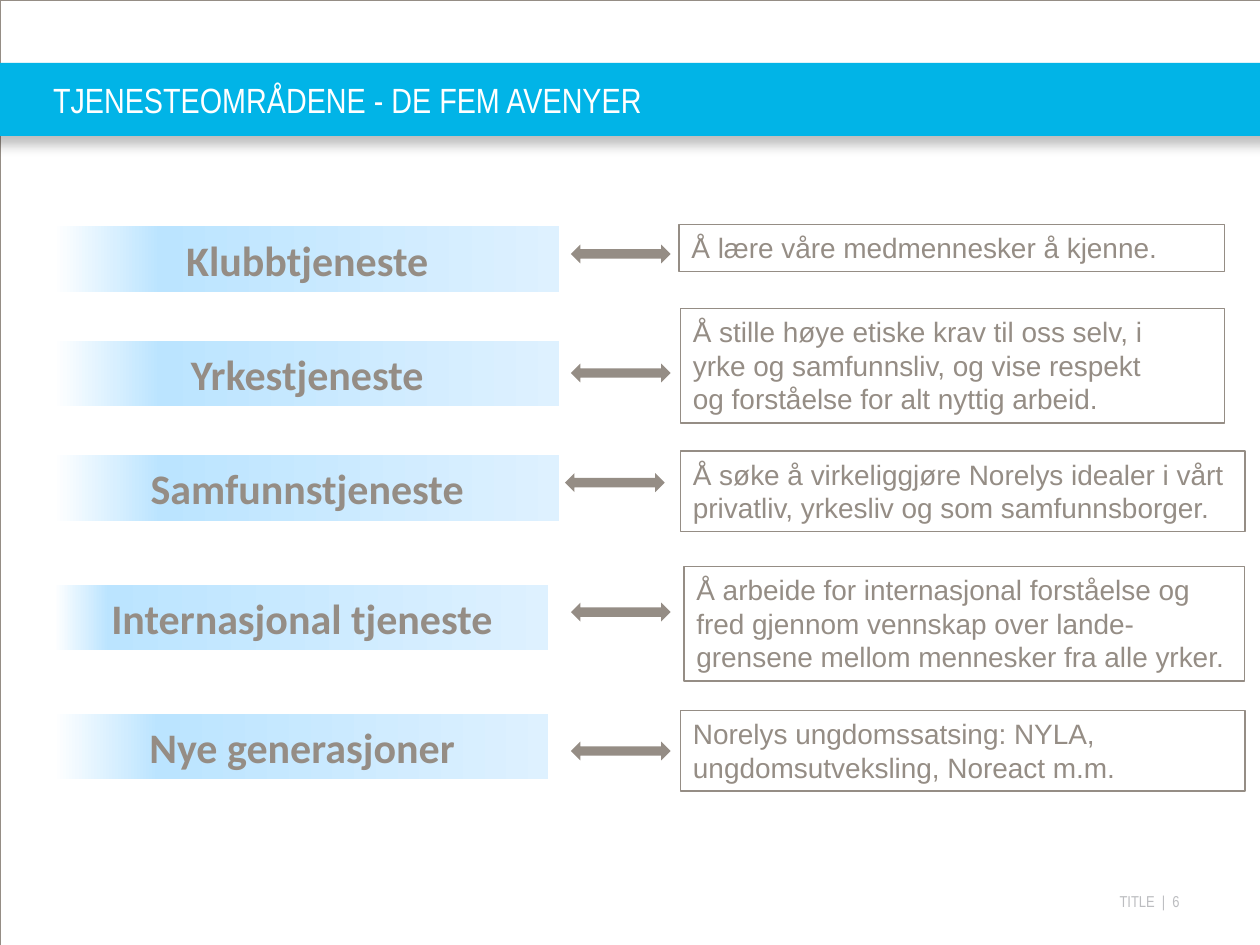
from copy import deepcopy
from typing import NamedTuple

from lxml.etree import SubElement
from pptx import Presentation
from pptx.dml.color import RGBColor
from pptx.enum.shapes import MSO_SHAPE
from pptx.enum.text import MSO_ANCHOR, PP_ALIGN
from pptx.oxml.ns import qn
from pptx.util import Cm, Pt

WHITE = RGBColor(0xFF, 0xFF, 0xFF)
BLACK = RGBColor(0x00, 0x00, 0x00)
TAUPE = RGBColor(0x95, 0x8D, 0x85)
CYAN = RGBColor(0x01, 0xB4, 0xE7)
SKY = RGBColor(0xBB, 0xE4, 0xFF)
PALE = RGBColor(0xDE, 0xF1, 0xFF)
SILVER = RGBColor(0xBC, 0xBD, 0xC0)

SLIDE_WIDTH, SLIDE_HEIGHT = 25.4, 19.05
ROW_LEFT = 1.09
LABEL_HEIGHT = 1.4
ARROW_WIDTH, ARROW_HEIGHT = 2.01, 0.38


class Avenue(NamedTuple):
    """One avenue of service, with offsets in cm from the row's corner."""

    top: float
    label: str
    label_width: float
    peak: float
    arrow_left: float
    arrow_top: float
    text: str
    text_left: float
    text_top: float
    text_width: float
    text_height: float


AVENUES = [
    Avenue(4.53, "Klubbtjeneste", 10.21, 0.21, 10.42, 0.4,
           "Å lære våre medmennesker å kjenne.", 12.6, 0, 11, 0.94),
    Avenue(6.83, "Yrkestjeneste", 10.21, 0.21, 10.42, 0.5,
           "Å stille høye etiske krav til oss selv, i\n"
           "yrke og samfunnsliv, og vise respekt\n"
           "og forståelse for alt nyttig arbeid.", 12.63, -0.61, 10.97, 2.31),
    Avenue(9.14, "Samfunnstjeneste", 10.21, 0.21, 10.3, 0.4,
           "Å søke å virkeliggjøre Norelys idealer i vårt "
           "privatliv, yrkesliv og som samfunnsborger.", 12.63, -0.05, 11.38, 1.63),
    Avenue(11.75, "Internasjonal tjeneste", 10, 0.11, 10.42, 0.4,
           "Å arbeide for internasjonal forståelse og\n"
           "fred gjennom vennskap over lande-grensene "
           "mellom mennesker fra alle yrker.", 12.7, -0.33, 11.3, 2.31),
    Avenue(14.35, "Nye generasjoner", 10, 0.21, 10.42, 0.6,
           "Norelys ungdomssatsing: NYLA, ungdomsutveksling, Noreact m.m.",
           12.63, -0.03, 11.38, 1.63),
]


def add_block(slide, left, top, width, height, preset=MSO_SHAPE.RECTANGLE,
              fill=None, line=None, line_width=0.75):
    """Add a preset shape without shadow; absent colours leave it unpainted."""
    shape = slide.shapes.add_shape(preset, Cm(left), Cm(top), Cm(width), Cm(height))
    shape.shadow.inherit = False
    if fill is None:
        shape.fill.background()
    else:
        shape.fill.solid()
        shape.fill.fore_color.rgb = fill
    if line is None:
        shape.line.fill.background()
    else:
        shape.line.color.rgb = line
        shape.line.width = Pt(line_width)
    return shape


def write_text(shape, text, font_name, size, color, bold=False,
               align=PP_ALIGN.LEFT, anchor=MSO_ANCHOR.TOP):
    """Fill a shape with one wrapped paragraph in a single style."""
    frame = shape.text_frame
    frame.word_wrap = True
    frame.vertical_anchor = anchor
    paragraph = frame.paragraphs[0]
    paragraph.text = text
    paragraph.alignment = align
    for run in paragraph.runs:
        run.font.name = font_name
        run.font.size = Pt(size)
        run.font.bold = bold
        run.font.color.rgb = color
    properties = paragraph.runs[0].font._element
    for line_break in paragraph._p.findall(qn("a:br")):
        line_break.append(deepcopy(properties))


def add_text(slide, left, top, width, height, text, size, color, align):
    """Add a text box without margins in the heading font."""
    box = slide.shapes.add_textbox(Cm(left), Cm(top), Cm(width), Cm(height))
    frame = box.text_frame
    frame.margin_left = frame.margin_right = 0
    frame.margin_top = frame.margin_bottom = 0
    write_text(box, text, "Arial Narrow", size, color, align=align,
               anchor=MSO_ANCHOR.MIDDLE)


def fade_fill(shape, peak):
    """Fade a shape from white through sky blue at the peak to pale blue."""
    shape.fill.gradient()
    shape.fill.gradient_angle = 0
    stops = shape._element.spPr.find(qn("a:gradFill")).find(qn("a:gsLst"))
    stops.append(deepcopy(stops[-1]))
    colors = [(0, WHITE), (peak, SKY), (1, PALE)]
    for stop, (position, color) in zip(shape.fill.gradient_stops, colors):
        stop.position = position
        stop.color.rgb = color


def add_drop_shadow(shape):
    """Cast a soft shadow straight down."""
    effects = shape._element.spPr.find(qn("a:effectLst"))
    shadow = SubElement(effects, qn("a:outerShdw"), blurRad=str(Pt(7)),
                        dist=str(Pt(4.8)), dir="5400000", rotWithShape="0")
    color = SubElement(shadow, qn("a:srgbClr"), val=str(BLACK))
    SubElement(color, qn("a:alpha"), val="25000")


def add_header(slide, top, height, title):
    """Add the title band across the slide."""
    band = add_block(slide, -0.2, top, SLIDE_WIDTH + 0.4, height, fill=CYAN)
    add_drop_shadow(band)
    add_text(slide, 1.07, top, SLIDE_WIDTH - 1.07, height, title, 20, WHITE,
             PP_ALIGN.LEFT)


def add_avenue(slide, left, avenue):
    """Add a row with its label, double arrow and description."""
    top = avenue.top
    label = add_block(slide, left, top, avenue.label_width, LABEL_HEIGHT,
                      line=WHITE, line_width=2)
    fade_fill(label, avenue.peak)
    write_text(label, avenue.label, "Calibri", 24, TAUPE, bold=True,
               align=PP_ALIGN.CENTER, anchor=MSO_ANCHOR.MIDDLE)
    add_block(slide, left + avenue.arrow_left, top + avenue.arrow_top,
              ARROW_WIDTH, ARROW_HEIGHT, MSO_SHAPE.LEFT_RIGHT_ARROW, fill=TAUPE)
    description = add_block(slide, left + avenue.text_left, top + avenue.text_top,
                            avenue.text_width, avenue.text_height, line=TAUPE)
    write_text(description, avenue.text, "Arial", 16, TAUPE)


def main():
    """Build and save the slide."""
    presentation = Presentation()
    presentation.slide_width = Cm(SLIDE_WIDTH)
    presentation.slide_height = Cm(SLIDE_HEIGHT)
    slide = presentation.slides.add_slide(presentation.slide_layouts[6])
    add_text(slide, 19.69, 17.98, 4.09, 0.38, "TITLE  |  6", 9, SILVER,
             PP_ALIGN.RIGHT)
    add_block(slide, 0, 0, SLIDE_WIDTH, SLIDE_HEIGHT, line=TAUPE, line_width=0.13)
    add_header(slide, 1.27, 1.47, "TJENESTEOMRÅDENE - DE FEM AVENYER")
    for avenue in AVENUES:
        add_avenue(slide, ROW_LEFT, avenue)
    presentation.save("out.pptx")


if __name__ == "__main__":
    main()
